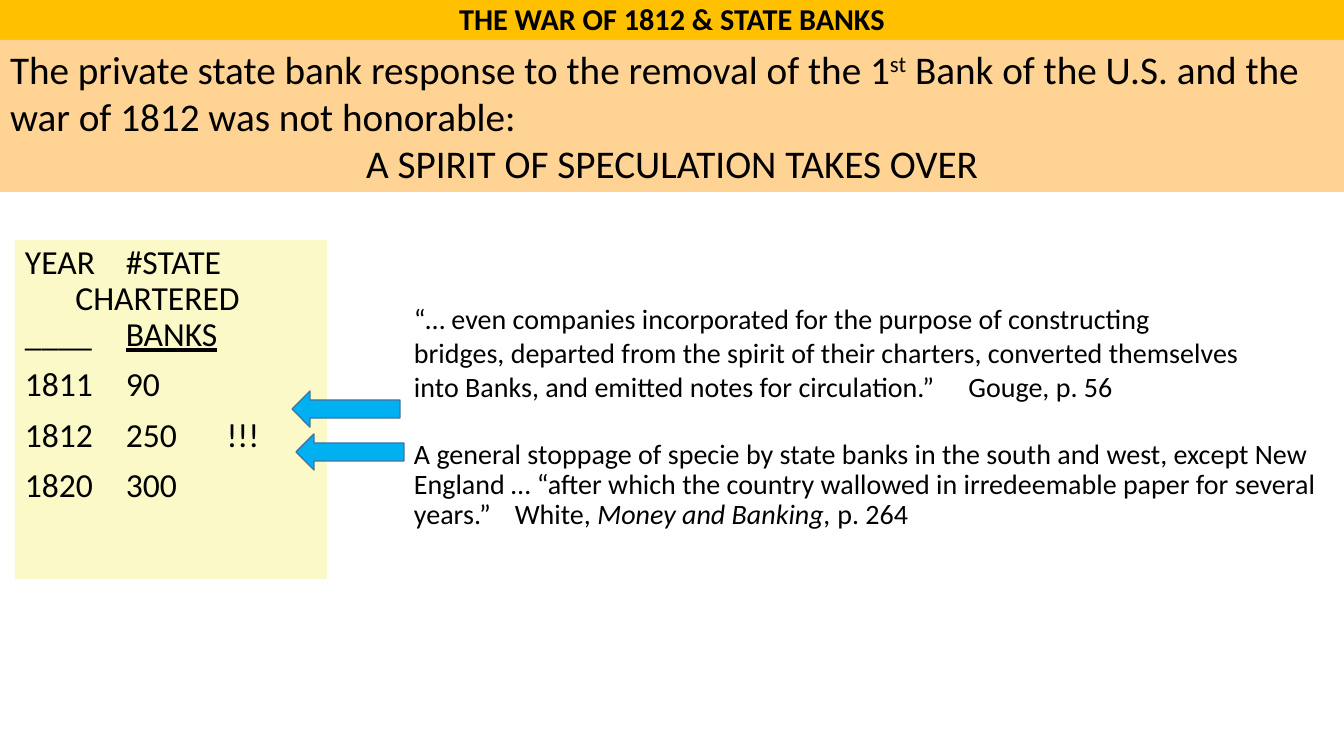
import pptx
import pptx.util
import pptx.dml.color
import pptx.enum.shapes
import pptx.enum.text
import pptx.oxml.ns
from lxml import etree

SCALE = 914400 / 100.8
ALIGN = pptx.enum.text.PP_ALIGN
ANCHOR = pptx.enum.text.MSO_ANCHOR
SHAPE = pptx.enum.shapes.MSO_SHAPE


def px(count):
    return round(count * SCALE)


def color(code):
    return pptx.dml.color.RGBColor.from_string(code)


def paint(shape, fill, line=None):
    shape.fill.solid()
    shape.fill.fore_color.rgb = color(fill)
    if line:
        shape.line.color.rgb = color(line)
        shape.line.width = pptx.util.Pt(1)
    else:
        shape.line.fill.background()


def place(shape, box):
    names = ("left", "top", "width", "height")
    for name, value in zip(names, box):
        setattr(shape, name, px(value))


def add_box(slide, kind, box, fill, line=None):
    shape = slide.shapes.add_shape(kind, *map(px, box))
    shape.shadow.inherit = False
    paint(shape, fill, line)
    return shape


def set_tabs(para, stops):
    """Remove the bullet and indent, and set left tab stops in px."""
    props = para._p.get_or_add_pPr()
    props.set("marL", "0")
    props.set("indent", "0")
    qn = pptx.oxml.ns.qn
    etree.SubElement(props, qn("a:buNone"))
    if stops:
        tabs = etree.SubElement(props, qn("a:tabLst"))
        for stop in stops:
            etree.SubElement(tabs, qn("a:tab"), pos=str(px(stop)), algn="l")


def add_run(para, text, size, base=None, **style):
    run = para.add_run()
    run.text = text
    look = {"name": "Calibri", "size": pptx.util.Pt(size), **style}
    for name, value in look.items():
        setattr(run.font, name, value)
    run.font.color.rgb = color("000000")
    if base:
        run._r.get_or_add_rPr().set("baseline", str(base * 1000))


def write(shape, size, rows, anchor=ANCHOR.TOP):
    """Fill a shape with rows of (runs, tab stops, paragraph format)."""
    frame = shape.text_frame
    look = {
        "word_wrap": True,
        "auto_size": pptx.enum.text.MSO_AUTO_SIZE.NONE,
        "vertical_anchor": anchor,
        "margin_left": px(10), "margin_right": px(10),
        "margin_top": px(5), "margin_bottom": px(5),
    }
    for name, value in look.items():
        setattr(frame, name, value)
    for index, (runs, stops, form) in enumerate(rows):
        para = frame.add_paragraph() if index else frame.paragraphs[0]
        set_tabs(para, stops)
        form = {"alignment": ALIGN.LEFT, "space_before": 0, **form}
        for name, value in form.items():
            setattr(para, name, value)
        for text, style in runs:
            add_run(para, text, size, **style)


def add_title(slide):
    title = slide.shapes.title
    place(title, (0, 0, 1344, 43))
    paint(title, "FFC000")
    form = {"alignment": ALIGN.CENTER, "line_spacing": 0.8}
    runs = [("THE WAR OF 1812 & STATE BANKS", {"bold": True})]
    write(title, 21.6, [(runs, [], form)], ANCHOR.MIDDLE)


def add_claim(slide):
    band = add_box(slide, SHAPE.RECTANGLE, (0, 40, 1344, 152), "FFD393")
    claim = [
        ("The private state bank response to the removal of the 1", {}),
        ("st", {"base": 30}),
        (" Bank of the U.S. and the war of 1812 was not honorable:", {}),
    ]
    cry = [("A SPIRIT OF SPECULATION TAKES OVER", {})]
    write(band, 28, [(claim, [], {}), (cry, [], {"alignment": ALIGN.CENTER})])


def add_count(slide):
    panel = add_box(slide, SHAPE.RECTANGLE, (15, 240, 312, 339), "FAF9C7")
    tight = {"line_spacing": 0.9}
    loose = {**tight, "space_before": pptx.util.Pt(10)}
    rows = [
        ([("YEAR\t#STATE", {})], [147], tight),
        ([("\tCHARTERED", {})], [122], tight),
        ([("____\t", {}), ("BANKS", {"underline": True})], [151], tight),
        ([("1811\t90", {})], [175], loose),
        ([("1812\t250\t!!!", {})], [160, 227], loose),
        ([("1820\t300", {})], [160], loose),
    ]
    write(panel, 24, rows)


def add_quotes(slide):
    gouge = slide.shapes.add_textbox(*map(px, (404, 297, 849, 112)))
    runs = [("“… even companies incorporated for the purpose of constructing "
             "bridges, departed from the spirit of their charters, converted "
             "themselves into Banks, and emitted notes for circulation.”\t"
             "Gouge, p. 56", {})]
    write(gouge, 20, [(runs, [559], {})])

    white = slide.placeholders[1]
    place(white, (404, 435, 937, 102))
    runs = [
        ("A general stoppage of specie by state banks in the south and west, "
         "except New England … “after which the country wallowed in "
         "irredeemable paper for several years.”\tWhite, ", {}),
        ("Money and Banking, ", {"italic": True}),
        ("p. 264", {}),
    ]
    write(white, 20, [(runs, [115], {"line_spacing": 0.9})])


def main():
    deck = pptx.Presentation()
    deck.slide_width, deck.slide_height = px(1344), px(756)
    slide = deck.slides.add_slide(deck.slide_layouts[1])
    add_title(slide)
    add_claim(slide)
    add_count(slide)
    add_quotes(slide)
    for left, top in ((292, 391), (296, 434)):
        add_box(slide, SHAPE.LEFT_ARROW, (left, top, 108, 36),
                "00B0F0", "43739E")
    deck.save("out.pptx")


if __name__ == "__main__":
    main()
